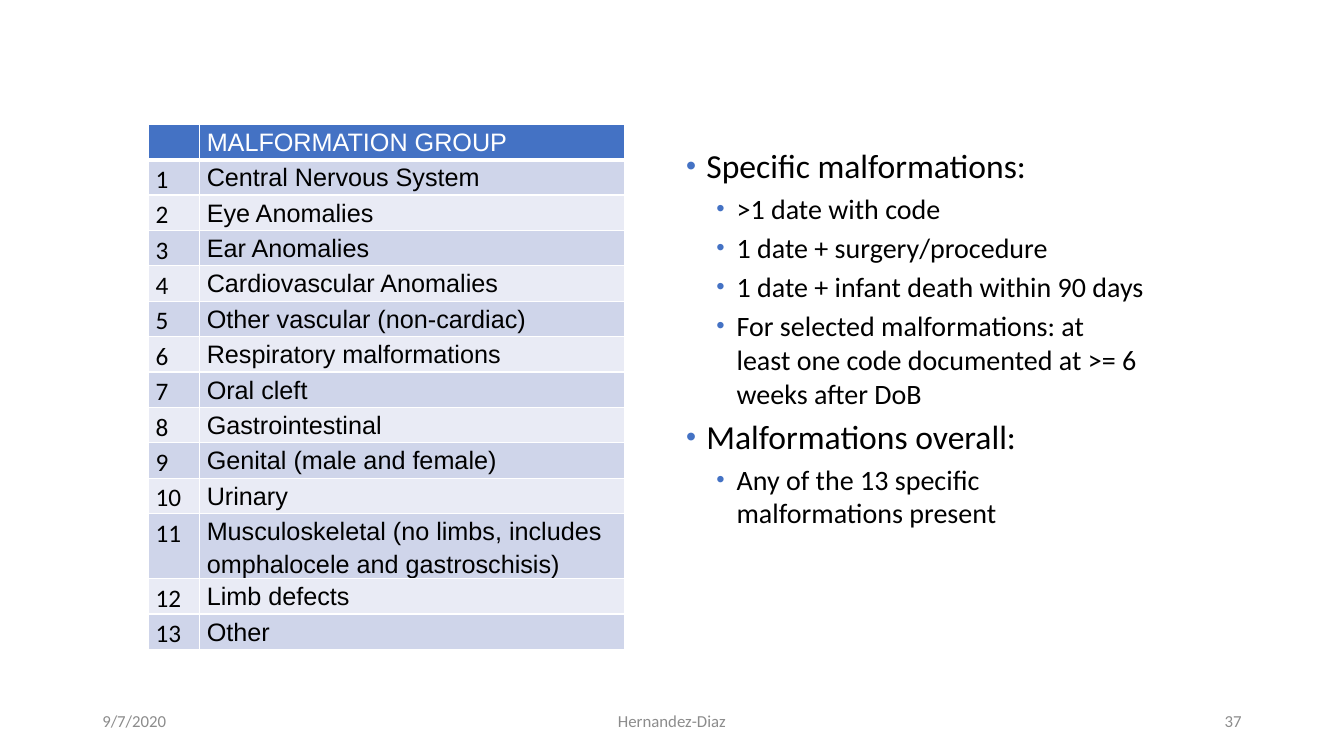
from lxml import etree
from pptx import Presentation
from pptx.dml.color import RGBColor
from pptx.enum import text
from pptx.oxml import ns
from pptx.util import Pt

HEAD = "MALFORMATION GROUP"
GROUPS = [
    "Central Nervous System",
    "Eye Anomalies",
    "Ear Anomalies",
    "Cardiovascular Anomalies",
    "Other vascular (non-cardiac)",
    "Respiratory malformations",
    "Oral cleft",
    "Gastrointestinal",
    "Genital (male and female)",
    "Urinary",
    "Musculoskeletal (no limbs, includes omphalocele and gastroschisis)",
    "Limb defects",
    "Other",
]
RULES = [
    (0, "Specific malformations:"),
    (1, ">1 date with code"),
    (1, "1 date + surgery/procedure"),
    (1, "1 date + infant death within 90 days"),
    (1, "For selected malformations: at least one code documented at >= 6 weeks after DoB"),
    (0, "Malformations overall:"),
    (1, "Any of the 13 specific malformations present"),
]
LEFT, MID, RIGHT = text.PP_ALIGN.LEFT, text.PP_ALIGN.CENTER, text.PP_ALIGN.RIGHT
FOOT = [
    ("9/7/2020", 66, 216, LEFT),
    ("Hernandez-Diaz", 318, 324, MID),
    ("37", 678, 216, RIGHT),
]
BLUE, WHITE, BLACK, GREY = "4472C4", "FFFFFF", "000000", "8C8C8C"
BANDS = ["E9EBF5", "CFD5EA"]
SIZES = [24, 20]    # text size by list level
STEPS = [14.4, 36]  # text indent by list level
HANG = 14.4
WIDTHS = [36.5, 303.3]
ROW = 25.27


def color(code):
    return RGBColor.from_string(code)


def style(para, face, size, code):
    para.font.name, para.font.size = face, Pt(size)
    para.font.color.rgb = color(code)


def add(parent, tag, **attrs):
    return etree.SubElement(parent, ns.qn(tag), attrs)


def box(left, top, width, height):
    frame = slide.shapes.add_textbox(Pt(left), Pt(top), Pt(width), Pt(height)).text_frame
    frame.word_wrap = True
    return frame


def edge(cell, heavy):
    """Draw white borders, with a thick bottom one if heavy."""
    props = cell._tc.get_or_add_tcPr()
    for at, side in enumerate(("a:lnL", "a:lnR", "a:lnT", "a:lnB")):
        wide = 3 if heavy and side == "a:lnB" else 1
        line = etree.Element(ns.qn(side), w=str(Pt(wide)))
        add(add(line, "a:solidFill"), "a:srgbClr", val=WHITE)
        props.insert(at, line)


def bullet(para, level):
    props = para._p.get_or_add_pPr()
    props.set("marL", str(Pt(STEPS[level])))
    props.set("indent", str(Pt(-HANG)))
    add(add(props, "a:buClr"), "a:srgbClr", val=BLUE)
    add(props, "a:buSzPct", val="85000")
    add(props, "a:buFont", typeface="Arial")
    add(props, "a:buChar", char="•")


def draw_table():
    rows = [("", HEAD)] + [(str(n), name) for n, name in enumerate(GROUPS, 1)]
    table = slide.shapes.add_table(len(rows), 2, Pt(106.2), Pt(88.8),
                                   Pt(sum(WIDTHS)), Pt(ROW * len(rows))).table
    for col, width in zip(table.columns, WIDTHS):
        col.width = Pt(width)
    for r, row in enumerate(rows):
        table.rows[r].height = Pt(ROW)
        for c, words in enumerate(row):
            cell = table.cell(r, c)
            cell.margin_left = cell.margin_right = Pt(5)
            cell.margin_top = cell.margin_bottom = 0
            cell.fill.solid()
            cell.fill.fore_color.rgb = color(BANDS[r % 2] if r else BLUE)
            edge(cell, r == 0)
            cell.text = words
            para = cell.text_frame.paragraphs[0]
            para.line_spacing = 1.15
            style(para, "Arial" if c else "Calibri", 18, BLACK if r else WHITE)
            para.font.bold = False


def draw_rules():
    frame = box(483.1, 100.2, 341.4, 330.5)
    for n, (level, words) in enumerate(RULES):
        para = frame.add_paragraph() if n else frame.paragraphs[0]
        para.text, para.level = words, level
        bullet(para, level)
        if n:
            para.space_before = Pt(SIZES[level] * 0.2)
        style(para, "Calibri", SIZES[level], BLACK)


def draw_foot():
    for words, left, width, align in FOOT:
        frame = box(left, 500.5, width, 28.8)
        frame.vertical_anchor = text.MSO_ANCHOR.MIDDLE
        para = frame.paragraphs[0]
        para.text, para.alignment = words, align
        style(para, "Calibri", 12, GREY)


deck = Presentation()
deck.slide_width, deck.slide_height = Pt(960), Pt(540)
slide = deck.slides.add_slide(deck.slide_layouts[6])
draw_table()
draw_rules()
draw_foot()
deck.save("out.pptx")
